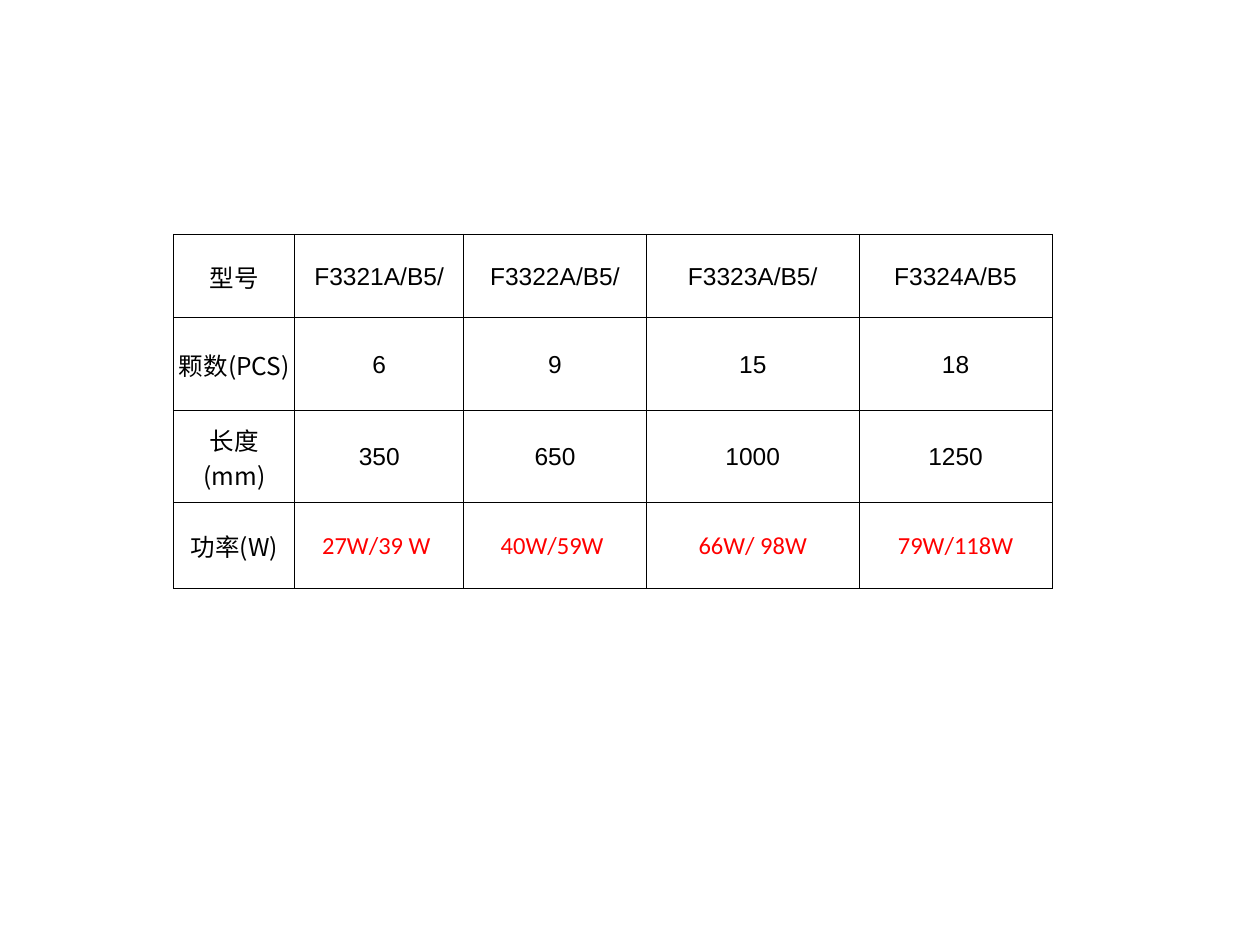
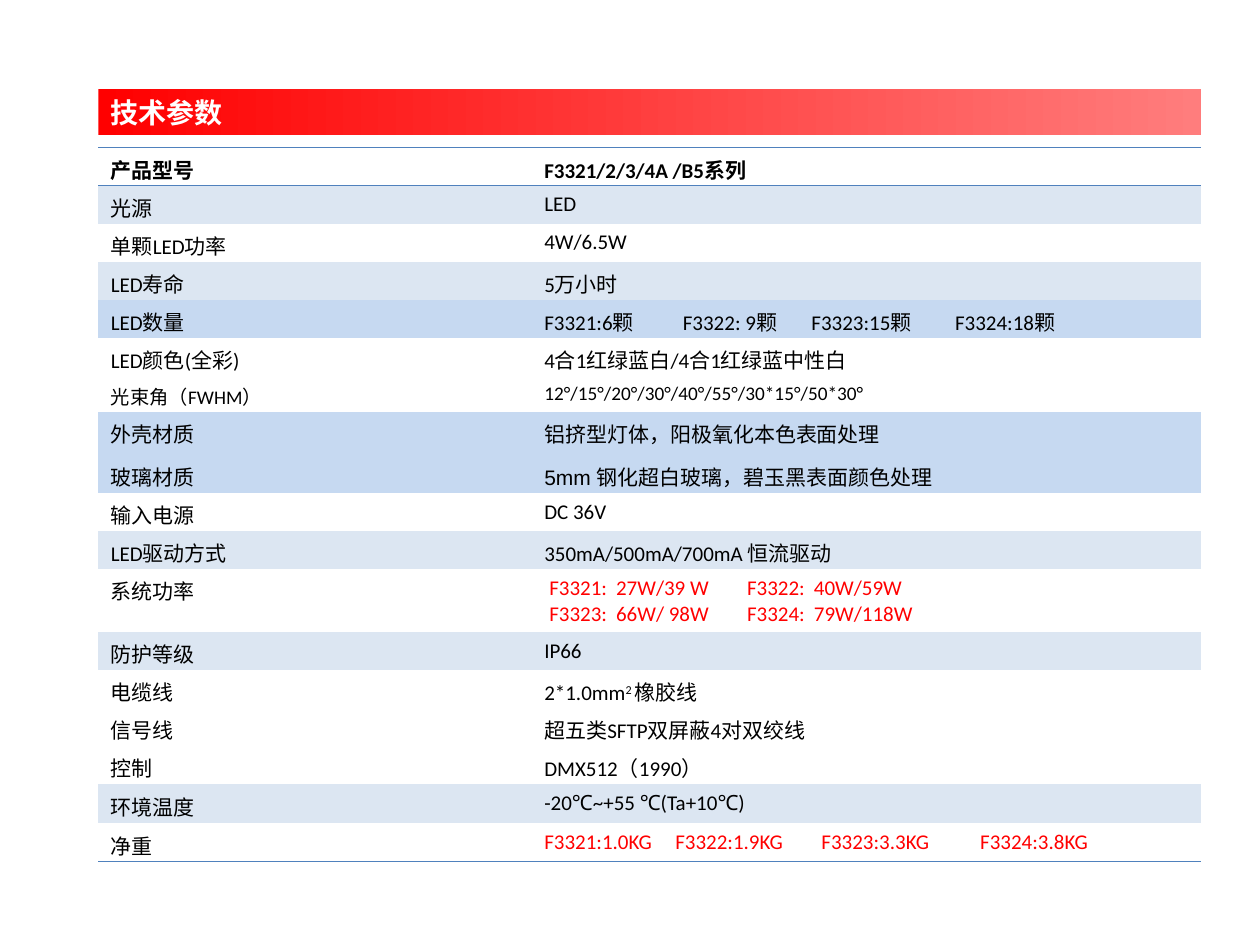
import pptx
import pptx.util
import pptx.dml.color
import pptx.enum.text
import pptx.oxml
import pptx.oxml.ns
from lxml import etree

Inches, Pt = pptx.util.Inches, pptx.util.Pt
RGB = pptx.dml.color.RGBColor
ALIGN = pptx.enum.text.PP_ALIGN
MIDDLE = pptx.enum.text.MSO_ANCHOR.MIDDLE

BLACK = RGB(0, 0, 0)
WHITE = RGB(255, 255, 255)
RED = RGB(255, 0, 0)
PINK = RGB(255, 125, 125)
BLUE = RGB(79, 129, 189)
PALE = RGB(220, 230, 242)
SKY = RGB(198, 217, 241)
HAN = "Noto Sans CJK SC"
PLAIN = "{2D5ABB26-0587-4C30-8999-92F81FD0307C}"

MODELS = [
    ("型号", "F3321A/B5/", "F3322A/B5/", "F3323A/B5/", "F3324A/B5"),
    ("颗数(PCS)", "6", "9", "15", "18"),
    ("长度\n(mm)", "350", "650", "1000", "1250"),
    ("功率(W)", "27W/39 W ", "40W/59W ", "66W/ 98W", "79W/118W"),
]
TITLE = "技术参数"
SPECS = [
    ("产品型号", "F3321/2/3/4A /B5系列", None),
    ("光源", "LED", PALE),
    ("单颗LED功率", "4W/6.5W", None),
    ("LED寿命", "5万小时", PALE),
    ("LED数量", "F3321:6颗\tF3322: 9颗\tF3323:15颗\tF3324:18颗", SKY),
    ("LED颜色(全彩)", "4合1红绿蓝白/4合1红绿蓝中性白", None),
    ("光束角（FWHM）", "12°/15°/20°/30°/40°/55°/30*15°/50*30°", None),
    ("外壳材质", "铝挤型灯体，阳极氧化本色表面处理", SKY),
    ("玻璃材质", "5mm 钢化超白玻璃，碧玉黑表面颜色处理", SKY),
    ("输入电源", "DC 36V", None),
    ("LED驱动方式", "350mA/500mA/700mA 恒流驱动", PALE),
    ("系统功率", "\tF3321:\t27W/39 W\tF3322:\t40W/59W\n"
             "\tF3323:\t66W/ 98W\tF3324:\t79W/118W", None),
    ("防护等级", "IP66", PALE),
    ("电缆线", "2*1.0mm^2 ^橡胶线", None),
    ("信号线", "超五类SFTP双屏蔽4对双绞线", None),
    ("控制", "DMX512（1990）", None),
    ("环境温度", "-20℃~+55 ℃(Ta+10℃)", PALE),
    ("净重", "F3321:1.0KG\tF3322:1.9KG\tF3323:3.3KG\tF3324:3.8KG", None),
]
TABS = {
    "LED数量": (1.1, 2.12, 3.26),
    "系统功率": (0.04, 0.57, 1.61, 2.14),
    "净重": (1.04, 2.2, 3.46),
}
HIGH = {"光束角（FWHM）": 0.29, "外壳材质": 0.34, "系统功率": 0.5, "环境温度": 0.31}


def apply(item, form):
    for name, value in form.items():
        setattr(item, name, value)


def style(run, color, han=False, **form):
    apply(run.font, form)
    run.font.color.rgb = color
    if han:
        face = etree.SubElement(run.font._element, pptx.oxml.ns.qn("a:ea"))
        face.set("typeface", HAN)


def write(frame, text, color, tabs=(), align=ALIGN.LEFT, **form):
    for num, line in enumerate(text.split("\n")):
        para = frame.add_paragraph() if num else frame.paragraphs[0]
        para.alignment = align
        if tabs:
            props = para._p.get_or_add_pPr()
            stops = etree.SubElement(props, pptx.oxml.ns.qn("a:tabLst"))
            for stop in tabs:
                etree.SubElement(stops, pptx.oxml.ns.qn("a:tab"),
                                 pos=str(Inches(stop)), algn="l")
        for part, words in enumerate(line.split("^")):
            run = para.add_run()
            run.text = words
            style(run, color, **form)
            if part % 2:
                run.font._element.set("baseline", "30000")


def border(cell, sides, color, width):
    props = cell._tc.get_or_add_tcPr()
    for side in sides:
        props.append(pptx.oxml.parse_xml(
            f'<a:ln{side} {pptx.oxml.ns.nsdecls("a")} w="{Pt(width)}"><a:solidFill>'
            f'<a:srgbClr val="{color}"/></a:solidFill></a:ln{side}>'))


def paint(cell, color):
    if color is None:
        cell.fill.background()
    else:
        cell.fill.solid()
        cell.fill.fore_color.rgb = color


def grid(slide, left, top, cols, rows):
    box = [Inches(v) for v in (left, top, sum(cols), sum(rows))]
    table = slide.shapes.add_table(len(rows), len(cols), *box).table
    apply(table, {"first_row": False, "horz_banding": False})
    table._tbl.tblPr.find(pptx.oxml.ns.qn("a:tableStyleId")).text = PLAIN
    for col, width in zip(table.columns, cols):
        col.width = Inches(width)
    for row, height in zip(table.rows, rows):
        row.height = Inches(height)
    return table


def models(deck):
    slide = deck.slides.add_slide(deck.slide_layouts[6])
    table = grid(slide, 1.38, 1.86, (0.96, 1.34, 1.45, 1.69, 1.53),
                 (0.66, 0.74, 0.73, 0.68))
    edge = Inches(0.01)
    form = {"margin_left": edge, "margin_right": edge, "margin_top": edge,
            "margin_bottom": 0, "vertical_anchor": MIDDLE}
    last = len(MODELS) - 1
    for r, row in enumerate(MODELS):
        for c, text in enumerate(row):
            cell = table.cell(r, c)
            apply(cell, form)
            border(cell, "LRTB", BLACK, 0.5)
            paint(cell, WHITE)
            power = r == last and c > 0
            face = HAN if c == 0 else "Calibri" if power else "Arial"
            write(cell.text_frame, text, RED if power else BLACK, han=c == 0,
                  align=ALIGN.CENTER, name=face, size=Pt(14))


def banner(slide):
    title = slide.shapes.title
    apply(title, {"left": Inches(0.78), "top": Inches(0.71),
                  "width": Inches(8.75), "height": Inches(0.36)})
    title.fill.gradient()
    title.fill.gradient_angle = 0
    for stop, color, place in zip(title.fill.gradient_stops, (RED, PINK), (0, 1)):
        stop.color.rgb = color
        stop.position = place
    frame = title.text_frame
    apply(frame, {"auto_size": pptx.enum.text.MSO_AUTO_SIZE.NONE,
                  "vertical_anchor": MIDDLE, "word_wrap": True})
    write(frame, TITLE, WHITE, han=True, name=HAN, size=Pt(16), bold=True)


def specs(deck):
    slide = deck.slides.add_slide(deck.slide_layouts[5])
    banner(slide)
    table = grid(slide, 0.78, 1.17, (3.44, 5.31),
                 [HIGH.get(label, 0.3) for label, _, _ in SPECS])
    lines = {0: "TB", len(SPECS) - 1: "B"}
    for r, (label, value, fill) in enumerate(SPECS):
        for c, text in enumerate((label, value)):
            cell = table.cell(r, c)
            cell.margin_bottom = Inches(0.01)
            border(cell, lines.get(r, ""), BLUE, 1)
            paint(cell, fill)
            hot = c == 1 and label in ("系统功率", "净重")
            write(cell.text_frame, text, RED if hot else BLACK,
                  tabs=TABS.get(label, ()) if c else (),
                  name="Arial" if c and label == "玻璃材质" else "Calibri",
                  size=Pt(11 if label.startswith("光束角") else 12), bold=r == 0)


def main():
    deck = pptx.Presentation()
    apply(deck, {"slide_width": Inches(10), "slide_height": Inches(7.5)})
    models(deck)
    specs(deck)
    deck.save("out.pptx")


if __name__ == "__main__":
    main()
